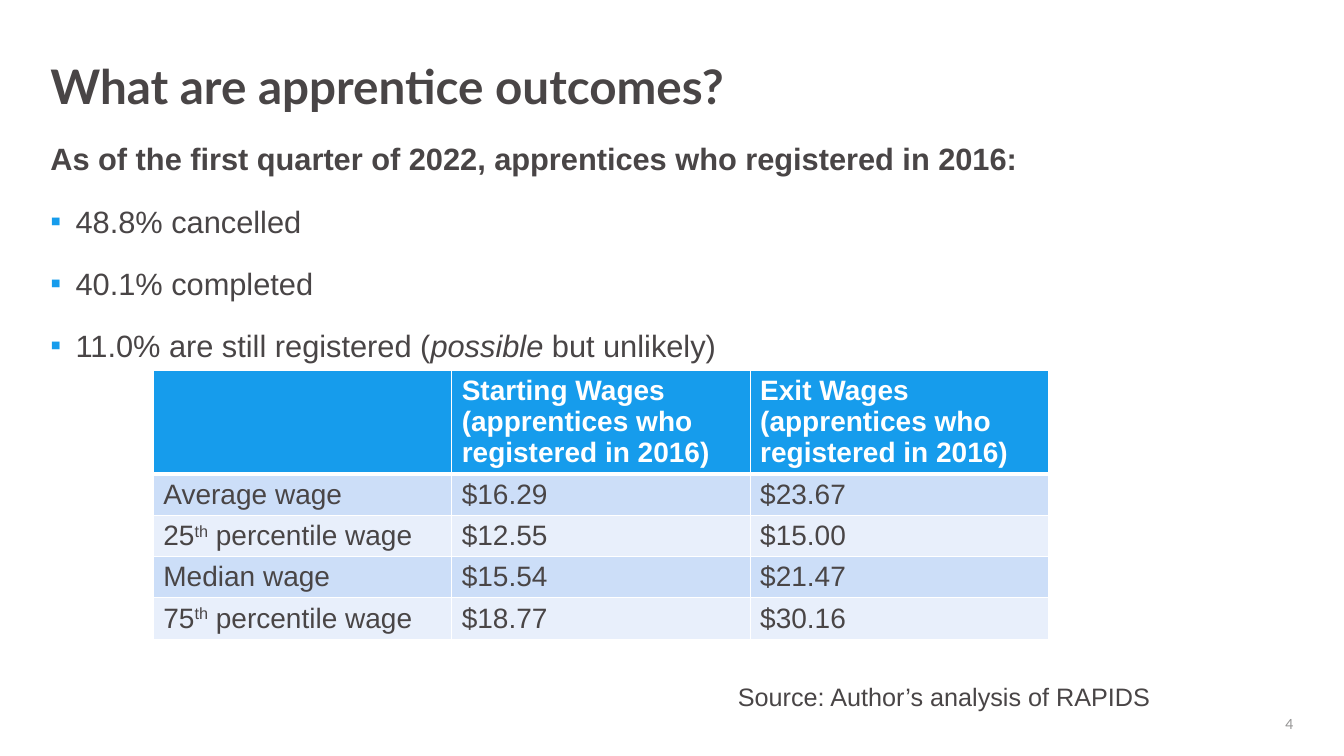
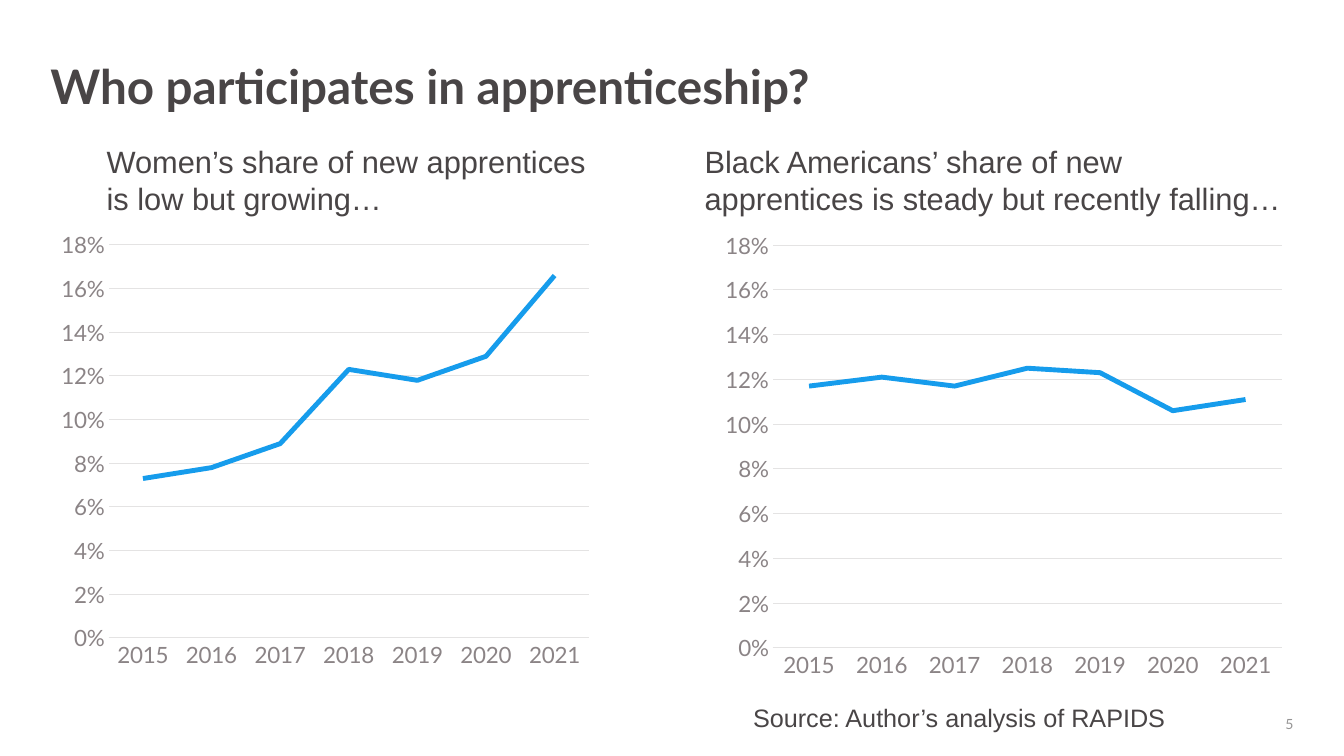
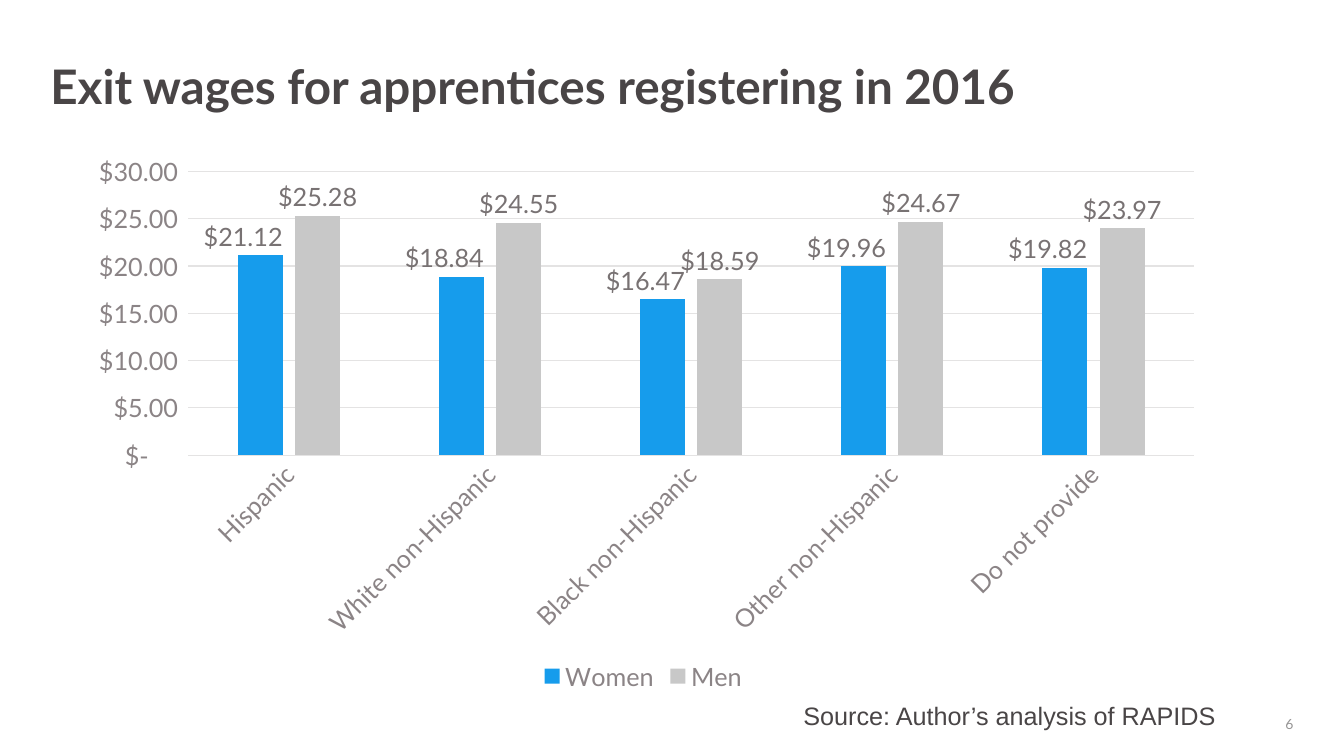
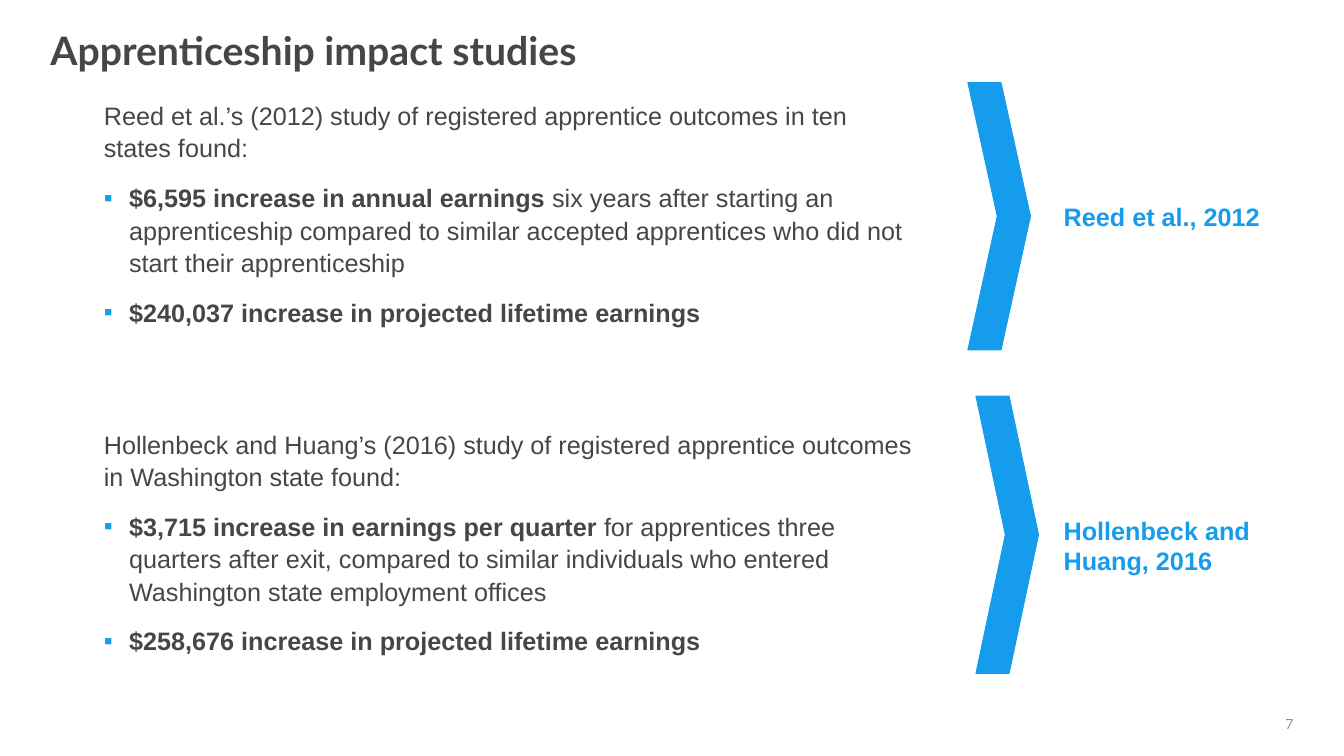
from dataclasses import dataclass

from pptx import Presentation
from pptx import util as u
from pptx.chart.data import CategoryChartData
from pptx.dml.color import RGBColor
from pptx.enum import chart as ch, shapes, text
from pptx.oxml import parse_xml
from pptx.oxml.ns import nsdecls

PX = 9144  # EMU per px, 100 px to the inch


@dataclass(frozen=True)
class Theme:
    ink: str = "494546"
    accent: str = "169CEC"
    gray: str = "C8C8C8"
    axis: str = "8B8486"
    label: str = "787273"
    grid: str = "E4E3E3"
    number: str = "959494"
    white: str = "FFFFFF"
    bands: tuple = ("CCDEF8", "E8EFFB")
    head_font: str = "Lato"
    body_font: str = "Arial"
    title: int = 34
    small_title: int = 28
    lead: int = 22
    cell: int = 20
    text: int = 18
    tick: int = 16
    tiny: int = 10


THEME = Theme()

# Content: a paragraph is (is_bullet, [(text, style), ...])
FIRST_NUMBER = 4
SOURCE = "Source: Author’s analysis of RAPIDS"

OUTCOMES = [
    (False, [("As of the first quarter of 2022, apprentices who registered in 2016:", "b")]),
    (True, [("48.8% cancelled", "")]),
    (True, [("40.1% completed", "")]),
    (True, [("11.0% are still registered (", ""), ("possible", "i"), (" but unlikely)", "")]),
]
WAGE_HEADER = ["", "Starting Wages (apprentices who registered in 2016)",
               "Exit Wages (apprentices who registered in 2016)"]
WAGE_ROWS = [
    ([("Average wage", "")], "$16.29", "$23.67"),
    ([("25", ""), ("th", "sup"), (" percentile wage", "")], "$12.55", "$15.00"),
    ([("Median wage", "")], "$15.54", "$21.47"),
    ([("75", ""), ("th", "sup"), (" percentile wage", "")], "$18.77", "$30.16"),
]

YEARS = [str(year) for year in range(2015, 2022)]
SHARES = [  # caption, caption box, chart box, values
    ("Women’s share of new apprentices is low but growing…",
     (96, 137, 500, 84), (50, 221, 545, 451),
     (0.073, 0.078, 0.089, 0.123, 0.118, 0.129, 0.166)),
    ("Black Americans’ share of new apprentices is steady but recently falling…",
     (689, 137, 594, 84), (708, 221, 575, 461),
     (0.117, 0.121, 0.117, 0.125, 0.123, 0.106, 0.111)),
]

GROUPS = ["Hispanic", "White non-Hispanic", "Black non-Hispanic",
          "Other non-Hispanic", "Do not provide"]
EXIT_WAGES = [
    ("Women", THEME.accent, (21.12, 18.84, 16.47, 19.96, 19.82)),
    ("Men", THEME.gray, (25.28, 24.55, 18.59, 24.67, 23.97)),
]
DOLLARS = r'_("$"* #,##0.00_);_("$"* \(#,##0.00\);_("$"* "-"??_);_(@_)'

STUDIES = [
    [
        (False, [("Reed et al.’s (2012) study of registered apprentice outcomes "
                  "in ten states found:", "")]),
        (True, [("$6,595 increase in annual earnings ", "b"),
                ("six years after starting an apprenticeship compared to similar accepted "
                 "apprentices who did not start their apprenticeship", "")]),
        (True, [("$240,037 increase in projected lifetime earnings", "b")]),
    ],
    [
        (False, [("Hollenbeck and Huang’s (2016) study of registered apprentice outcomes "
                  "in Washington state found:", "")]),
        (True, [("$3,715 increase in earnings per quarter ", "b"),
                ("for apprentices three quarters after exit, compared to similar individuals "
                 "who entered Washington state employment offices", "")]),
        (True, [("$258,676 increase in projected lifetime earnings", "b")]),
    ],
]
CITATIONS = [  # label, label box, chevron box
    ("Reed et al., 2012", (1055, 199, 210, 32), (960, 82, 62, 265)),
    ("Hollenbeck and Huang, 2016", (1055, 510, 200, 62), (968, 393, 62, 275)),
]


# Text helpers
def scaled(box):
    return [length * PX for length in box]


def rgb(color):
    return RGBColor.from_string(color)


def set_font(font, size, color=THEME.ink, name=THEME.body_font, bold=None):
    font.size, font.name, font.bold = u.Pt(size), name, bold
    font.color.rgb = rgb(color)


def add_spans(para, spans):
    for words, style in spans:
        span = para.add_run()
        span.text = words
        if style == "b":
            span.font.bold = True
        elif style == "i":
            span.font.italic = True
        elif style == "sup":
            span._r.get_or_add_rPr().set("baseline", "30000")


def set_frame(frame, insets, anchor=text.MSO_ANCHOR.TOP):
    frame.word_wrap = True
    frame.auto_size = text.MSO_AUTO_SIZE.NONE
    frame.vertical_anchor = anchor
    (frame.margin_left, frame.margin_top,
     frame.margin_right, frame.margin_bottom) = scaled(insets)


def place(shape, box):
    shape.left, shape.top, shape.width, shape.height = scaled(box)


def add_text(slide, words, box, size, color=THEME.ink, name=THEME.body_font, bold=None,
             insets=(10, 5, 10, 5), anchor=text.MSO_ANCHOR.TOP, align=text.PP_ALIGN.LEFT):
    frame = slide.shapes.add_textbox(*scaled(box)).text_frame
    set_frame(frame, insets, anchor)
    para = frame.paragraphs[0]
    para.text, para.alignment = words, align
    set_font(para.font, size, color, name, bold)


def set_bullet(para, is_bullet):
    props = para._p.get_or_add_pPr()
    indent = 25 * PX if is_bullet else 0
    props.set("marL", str(indent))
    props.set("indent", str(-indent))
    if is_bullet:
        props.append(parse_xml(f'<a:buClr {nsdecls("a")}><a:srgbClr val="{THEME.accent}"/></a:buClr>'))
        props.append(parse_xml(f'<a:buChar {nsdecls("a")} char="▪"/>'))
    else:
        props.append(parse_xml(f'<a:buNone {nsdecls("a")}/>'))


def fill_body(slide, groups, box, size, after, group_gap=0):
    body = slide.placeholders[1]
    place(body, box)
    frame = body.text_frame
    set_frame(frame, (0, 0, 0, 10))
    para = None
    for group in groups:
        for index, (is_bullet, spans) in enumerate(group):
            first = para is None
            para = frame.paragraphs[0] if first else frame.add_paragraph()
            set_bullet(para, is_bullet)
            para.line_spacing = 1.08
            para.space_before = u.Pt(group_gap if index == 0 and not first else 0)
            para.space_after = u.Pt(after)
            set_font(para.font, size)
            add_spans(para, spans)


# Shared slide frame: title and page number
def new_slide(deck, layout, title, size=THEME.title, top=58):
    slide = deck.slides.add_slide(deck.slide_layouts.get_by_name(layout))
    place(slide.shapes.title, (50, top, 1233, 127))
    frame = slide.shapes.title.text_frame
    set_frame(frame, (0, 5, 0, 5))
    para = frame.paragraphs[0]
    para.text, para.alignment, para.line_spacing = title, text.PP_ALIGN.LEFT, 0.9
    set_font(para.font, size, name=THEME.head_font, bold=True)
    number = FIRST_NUMBER + len(deck.slides) - 1
    add_text(slide, str(number), (983, 707, 300, 23), THEME.tiny, THEME.number,
             THEME.head_font, insets=(0, 0, 0, 0), anchor=text.MSO_ANCHOR.MIDDLE,
             align=text.PP_ALIGN.RIGHT)
    return slide


def add_source(slide, left, top):
    add_text(slide, SOURCE, (left, top, 468, 40), THEME.text)


# Table helpers
def set_borders(cell, bottom):
    props = cell._tc.get_or_add_tcPr()
    for index, (side, points) in enumerate((("L", 1), ("R", 1), ("T", 1), ("B", bottom))):
        props.insert(index, parse_xml(
            f'<a:ln{side} {nsdecls("a")} w="{u.Pt(points)}"><a:solidFill>'
            f'<a:srgbClr val="{THEME.white}"/></a:solidFill></a:ln{side}>'))


def add_wage_table(slide):
    rows = [WAGE_HEADER] + WAGE_ROWS
    heights = [102] + [41] * len(WAGE_ROWS)
    table = slide.shapes.add_table(len(rows), 3, *scaled((152, 367, 888, sum(heights)))).table
    for row, height in zip(table.rows, heights):
        row.height = height * PX
    for r, values in enumerate(rows):
        header = r == 0
        for c, value in enumerate(values):
            cell = table.cell(r, c)
            cell.fill.solid()
            cell.fill.fore_color.rgb = rgb(THEME.accent if header else THEME.bands[(r - 1) % 2])
            set_borders(cell, 3 if header else 1)
            para = cell.text_frame.paragraphs[0]
            set_font(para.font, THEME.cell, THEME.white if header else THEME.ink, bold=header)
            if value:
                add_spans(para, [(value, "")] if isinstance(value, str) else value)


# Chart helpers
def add_chart(slide, kind, box, categories, series, number_format, size):
    data = CategoryChartData(number_format=number_format)
    data.categories = categories
    for name, _, values in series:
        data.add_series(name, values)
    chart = slide.shapes.add_chart(kind, *scaled(box), data).chart
    chart.has_title = chart.has_legend = False
    set_font(chart.font, THEME.tiny)
    chart.plots[0].vary_by_categories = False
    for axis in (chart.category_axis, chart.value_axis):
        axis.major_tick_mark = axis.minor_tick_mark = ch.XL_TICK_MARK.NONE
        set_font(axis.tick_labels.font, size, THEME.axis, THEME.head_font)
    values = chart.value_axis
    values.minimum_scale = 0
    values.tick_labels.number_format = number_format
    values.tick_labels.number_format_is_linked = False
    values.format.line.fill.background()
    for line in (chart.category_axis.format.line, values.major_gridlines.format.line):
        line.color.rgb, line.width = rgb(THEME.grid), u.Pt(0.75)
    return chart


def add_share_chart(slide, box, values):
    chart = add_chart(slide, ch.XL_CHART_TYPE.LINE, box, YEARS,
                      [("Series 1", THEME.accent, values)], "0%", THEME.tick)
    chart.value_axis.maximum_scale, chart.value_axis.major_unit = 0.18, 0.02
    series = chart.plots[0].series[0]
    series.smooth = False
    series.format.line.color.rgb, series.format.line.width = rgb(THEME.accent), u.Pt(3.5)


def add_wage_chart(slide):
    chart = add_chart(slide, ch.XL_CHART_TYPE.COLUMN_CLUSTERED, (69, 144, 1138, 547),
                      GROUPS, EXIT_WAGES, DOLLARS, THEME.text)
    chart.value_axis.maximum_scale, chart.value_axis.major_unit = 30, 5
    chart.category_axis._element.txPr.bodyPr.set("rot", "-2700000")
    chart.has_legend = True
    chart.legend.position = ch.XL_LEGEND_POSITION.BOTTOM
    chart.legend.include_in_layout = False
    set_font(chart.legend.font, THEME.text, THEME.axis, THEME.head_font)
    plot = chart.plots[0]
    plot.gap_width, plot.overlap = 219, -27
    for series, (_, color, _) in zip(plot.series, EXIT_WAGES):
        series.format.fill.solid()
        series.format.fill.fore_color.rgb = rgb(color)
        labels = series.data_labels
        labels.show_value = True
        labels.number_format, labels.number_format_is_linked = DOLLARS, False
        labels.position = ch.XL_LABEL_POSITION.OUTSIDE_END
        set_font(labels.font, THEME.text, THEME.label, THEME.head_font)

    # Women's labels sit a little to the left of their bars
    women = plot.series[0]
    for index in range(len(GROUPS)):
        label = women.points[index].data_label
        set_font(label.font, THEME.text, THEME.label, THEME.head_font)
        label.position = ch.XL_LABEL_POSITION.OUTSIDE_END
    for mark in women.data_labels._element.xpath("c:dLbl/c:idx"):
        mark.addnext(parse_xml(f'<c:layout {nsdecls("c")}><c:manualLayout><c:x val="-0.015"/>'
                               '<c:y val="0"/></c:manualLayout></c:layout>'))


def add_chevron(slide, box):
    chevron = slide.shapes.add_shape(shapes.MSO_SHAPE.CHEVRON, *scaled(box))
    chevron.adjustments[0] = 0.47
    chevron.shadow.inherit = False
    chevron.fill.solid()
    chevron.fill.fore_color.rgb = rgb(THEME.accent)
    chevron.line.color.rgb, chevron.line.width = rgb(THEME.accent), u.Pt(0.75)


def main():
    deck = Presentation()
    deck.slide_width, deck.slide_height = scaled((1333, 750))

    # Outcomes
    slide = new_slide(deck, "Title and Content", "What are apprentice outcomes?")
    fill_body(slide, [OUTCOMES], (50, 136, 1117, 478), THEME.lead, 16)
    add_wage_table(slide)
    add_source(slide, 722, 671)

    # Participation
    slide = new_slide(deck, "Title Only", "Who participates in apprenticeship?")
    for caption, caption_box, chart_box, values in SHARES:
        add_share_chart(slide, chart_box, values)
        add_text(slide, caption, caption_box, THEME.lead)
    add_source(slide, 737, 692)

    # Exit wages
    slide = new_slide(deck, "Title Only", "Exit wages for apprentices registering in 2016")
    add_wage_chart(slide)
    add_source(slide, 787, 690)

    # Impact studies
    slide = new_slide(deck, "Title and Content", "Apprenticeship impact studies",
                      THEME.small_title, 26)
    fill_body(slide, STUDIES, (103, 97, 803, 500), THEME.text, 12, group_gap=59)
    for citation, label_box, chevron_box in CITATIONS:
        add_chevron(slide, chevron_box)
        add_text(slide, citation, label_box, THEME.text, THEME.accent, bold=True,
                 insets=(0, 1, 0, 0))

    deck.save("out.pptx")


if __name__ == "__main__":
    main()
